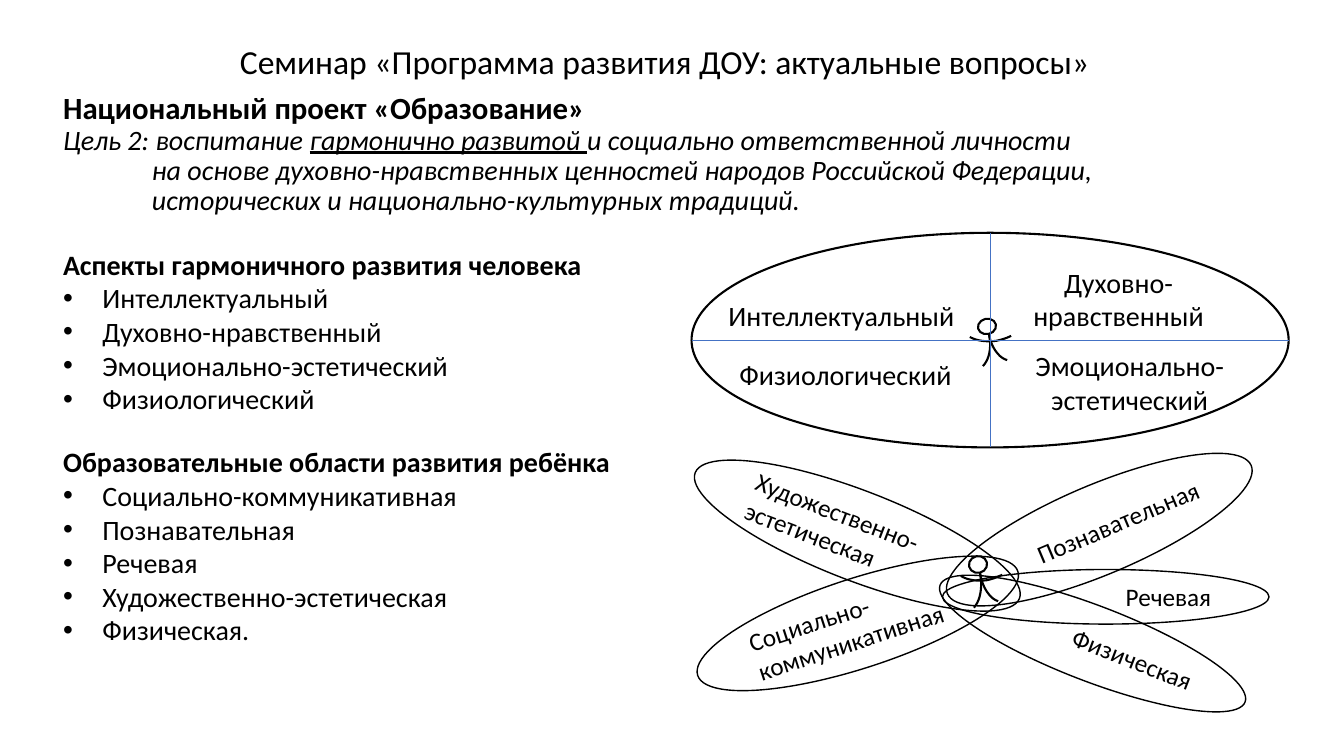
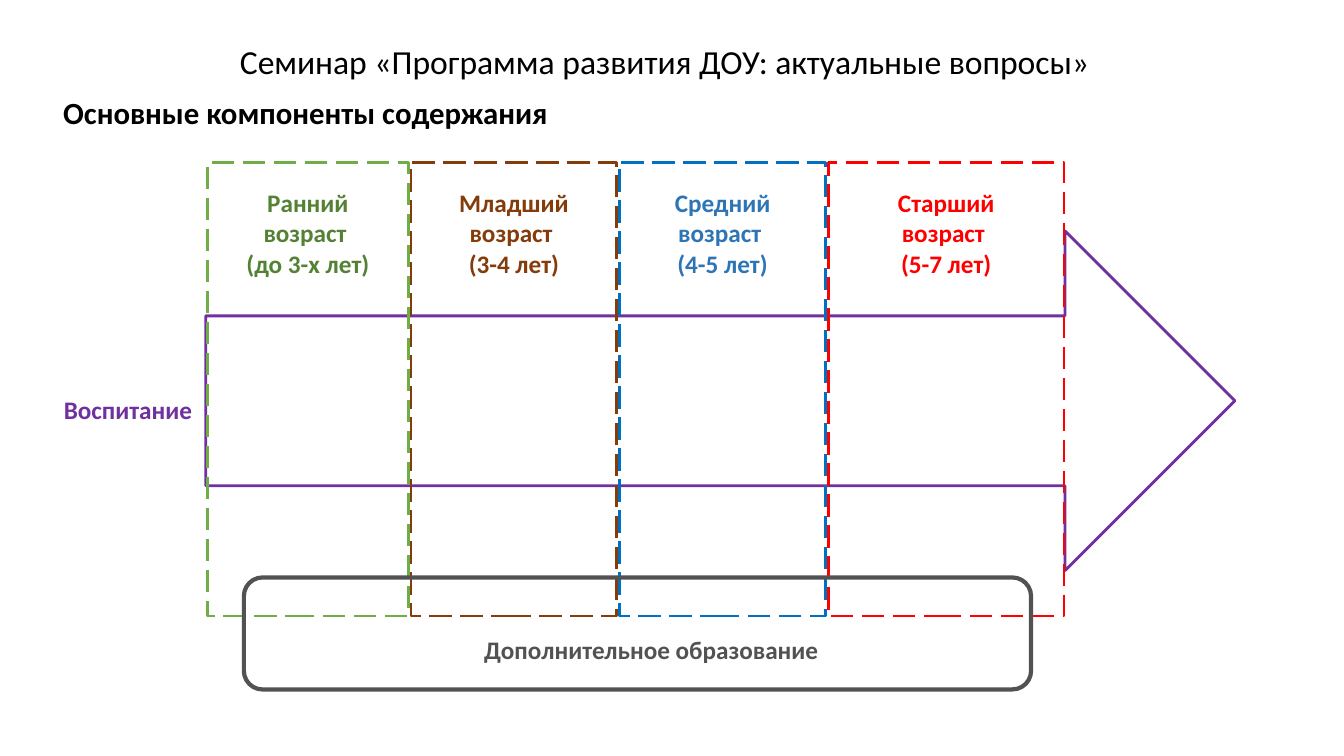
import dataclasses
import functools

import lxml.etree
import pptx
import pptx.dml.color
import pptx.enum.dml
import pptx.enum.shapes
import pptx.enum.text
import pptx.oxml.ns
import pptx.util

Pt = pptx.util.Pt
ALIGN = pptx.enum.text.PP_ALIGN
SHAPE = pptx.enum.shapes.MSO_SHAPE
qn = pptx.oxml.ns.qn


@dataclasses.dataclass(frozen=True)
class Theme:
    font: str = "Calibri"
    ink: str = "000000"
    axis: str = "4472C4"
    purple: str = "7030A0"
    gray: str = "525252"
    title: int = 24
    heading: int = 22
    body: int = 20
    label: int = 18
    tight: float = 0.9


T = Theme()
TITLE = "Семинар «Программа развития ДОУ: актуальные вопросы» "

GOAL = [  # lines, each a list of (text, underlined)
    [("Цель 2: воспитание ", False), ("гармонично развитой ", True),
     ("и социально ответственной личности", False)],
    [("на основе духовно-нравственных ценностей народов Российской Федерации,", False)],
    [("исторических и национально-культурных традиций.", False)],
]
LISTS = [  # heading, space before, items
    ("Аспекты гармоничного развития человека", 22,
     ["Интеллектуальный", "Духовно-нравственный",
      "Эмоционально-эстетический", "Физиологический"]),
    ("Образовательные области развития ребёнка", 21,
     ["Социально-коммуникативная", "Познавательная", "Речевая",
      "Художественно-эстетическая", "Физическая."]),
]
ASPECTS = [  # text, left, top, width, height
    ("Интеллектуальный", 511, 209.5, 180, 29),
    ("Духовно-нравственный", 721.5, 185.8, 155, 51),
    ("Физиологический", 514, 252, 180, 29),
    ("Эмоционально-эстетический", 726.5, 245.5, 161, 51),
]
PETALS = [  # text, left, top, width, height, rotation, alignment
    ("Социально-коммуникативная", 492.5, 413.3, 240.5, 64, -18, ALIGN.LEFT),
    ("Познавательная", 667.5, 346.3, 235.5, 64, -22.9, ALIGN.RIGHT),
    ("Художественно-эстетическая", 488.2, 350.6, 248.4, 64, 21.2, ALIGN.LEFT),
    ("Речевая", 673.2, 406.8, 233.3, 39, 0, ALIGN.RIGHT),
    ("Физическая", 663.8, 432.7, 233.3, 54, 21, ALIGN.RIGHT),
]
AGES = [  # text, column width, border colour, text colour
    ("Ранний возраст \v(до 3-х лет)", 143.3, "70AD47", "548235"),
    ("Младший возраст \v(3-4 лет)", 147, "843C0B", "843C0B"),
    ("Средний возраст \v(4-5 лет)", 147, "0070C0", "2E75B6"),
    ("Старший возраст \v(5-7 лет)", 168.5, "FF0000", "FF0000"),
]

# Limbs as Bezier points measured from the hip
LIMBS = [
    [(15.8, 1.4), (13, 2.9), (8.6, 4.3), (5, 5),
     (-2.2, 5.8), (-8.6, 5), (-13.7, 2.2)],
    [(13, 18.7), (7.2, 17.3), (1.4, 9.4), (0, 0)],
    [(-4.3, 23), (0, 18.7), (2.2, 10), (0, 0)],
]


def rgb(color):
    return pptx.dml.color.RGBColor.from_string(color)


# Text
def format_run(r, size, color=T.ink, bold=False, italic=False, underline=False):
    f = r.font
    f.name, f.size, f.bold, f.italic, f.underline = T.font, Pt(size), bold, italic, underline
    f.color.rgb = rgb(color)


def set_text(p, text, size, align=ALIGN.LEFT, **style):
    p.text = text
    p.alignment = align
    for r in p.runs:
        format_run(r, size, **style)


def add_box(slide, left, top, width, height):
    sp = slide.shapes.add_textbox(Pt(left), Pt(top), Pt(width), Pt(height))
    sp.text_frame.word_wrap = True
    return sp.text_frame


def add_label(slide, text, left, top, width, height, size=T.label,
              align=ALIGN.CENTER, **style):
    p = add_box(slide, left, top, width, height).paragraphs[0]
    set_text(p, text, size, align, **style)
    return p


def hang(p, indent, bullet=None):
    pPr = p._p.get_or_add_pPr()
    pPr.set("marL", str(Pt(indent)))
    pPr.set("indent", str(Pt(-indent)))
    if bullet:
        lxml.etree.SubElement(pPr, qn("a:buFont")).set("typeface", "Arial")
        lxml.etree.SubElement(pPr, qn("a:buChar")).set("char", bullet)


# Shapes
def outline(sp, color, width, dash=None):
    sp.shadow.inherit = False
    sp.fill.background()
    sp.line.color.rgb = rgb(color)
    sp.line.width = Pt(width)
    if dash:
        sp.line.dash_style = dash
    return sp


def add_outline(slide, kind, left, top, width, height, color=T.ink, line=1.5, dash=None):
    sp = slide.shapes.add_shape(kind, Pt(left), Pt(top), Pt(width), Pt(height))
    return outline(sp, color, line, dash)


def add_line(slide, x1, y1, x2, y2):
    ln = slide.shapes.add_connector(
        pptx.enum.shapes.MSO_CONNECTOR.STRAIGHT, Pt(x1), Pt(y1), Pt(x2), Pt(y2))
    ln.line.color.rgb = rgb(T.axis)
    ln.line.width = Pt(0.5)
    lxml.etree.SubElement(ln._element.spPr, qn("a:effectLst"))


def bezier(points, steps=10):
    """Sample a chain of cubic curves that share their end points."""
    result = [points[0]]
    for k in range(0, len(points) - 1, 3):
        curve = points[k:k + 4]
        for i in range(1, steps + 1):
            t = i / steps
            weights = ((1 - t) ** 3, 3 * t * (1 - t) ** 2, 3 * t * t * (1 - t), t ** 3)
            result.append(tuple(sum(w * c[axis] for w, c in zip(weights, curve))
                                for axis in (0, 1)))
    return result


def add_person(slide, x, y, stretch=1):
    for limb in LIMBS:
        pts = [(Pt(x + dx), Pt(y + dy * stretch)) for dx, dy in bezier(limb)]
        builder = slide.shapes.build_freeform(*pts[0])
        builder.add_line_segments(pts[1:], close=False)
        outline(builder.convert_to_shape(), T.ink, 1.5)
    head = add_outline(slide, SHAPE.OVAL, x - 7.9, y - 10.8 * stretch, 13, 11 * stretch)
    head.rotation = -12.3
    head.fill.solid()
    head.fill.fore_color.rgb = rgb("FFFFFF")


def add_petal(slide, text, left, top, width, height, rotation, align):
    sp = add_outline(slide, SHAPE.OVAL, left, top, width, height, line=1)
    sp.rotation = rotation
    tf = sp.text_frame
    tf.word_wrap = True
    tf.vertical_anchor = pptx.enum.text.MSO_ANCHOR.MIDDLE
    set_text(tf.paragraphs[0], text, T.label, align)


def add_slide(prs):
    slide = prs.slides.add_slide(prs.slide_layouts[6])
    add_label(slide, TITLE, 38, 28.8, 879, 34, T.title).line_spacing = T.tight
    return slide


# Slides
def goal_slide(prs):
    slide = add_slide(prs)

    # Goal and lists
    tf = add_box(slide, 38, 62.6, 896, 449)
    p = tf.paragraphs[0]
    set_text(p, "Национальный проект «Образование»", T.heading, bold=True)
    p.line_spacing = T.tight
    p = tf.add_paragraph()
    hang(p, 63.4)
    p.line_spacing = T.tight
    for i, line in enumerate(GOAL):
        if i:
            p.add_line_break()
        for text, underline in line:
            r = p.add_run()
            r.text = text
            format_run(r, T.body, italic=True, underline=underline)
    for heading, gap, items in LISTS:
        p = tf.add_paragraph()
        set_text(p, heading, T.body, bold=True)
        p.space_before = Pt(gap)
        for item in items:
            p = tf.add_paragraph()
            hang(p, 28, "•")
            set_text(p, item, T.body)

    # Four aspects around a person
    left, top, width, height = 494, 166.3, 426.5, 153.3
    mid_x, mid_y = left + width / 2, top + height / 2
    add_person(slide, 706.4, 238.5)
    add_outline(slide, SHAPE.OVAL, left, top, width, height)
    add_line(slide, mid_x, top, mid_x, top + height)
    add_line(slide, left, mid_y, left + width, mid_y)
    for aspect in ASPECTS:
        add_label(slide, *aspect, size=T.body)

    # Five areas as petals
    add_person(slide, 700, 409, 1.09)
    for petal in PETALS:
        add_petal(slide, *petal)


def components_slide(prs):
    slide = add_slide(prs)
    label = functools.partial(add_label, slide, bold=True)
    label("Основные компоненты содержания", 38, 63.5, 902, 34, T.heading, ALIGN.LEFT)

    # Upbringing arrow
    add_outline(slide, SHAPE.RIGHT_ARROW, 147, 165, 735, 242.6, T.purple, 2)
    label("Воспитание", 35.3, 278, 112.3, 29, color=T.purple)

    # Age columns
    left, top, gap, inset = 148.3, 116, 2, 13
    for text, width, border, color in AGES:
        add_outline(slide, SHAPE.RECTANGLE, left, top, width, 324, border, 2,
                    pptx.enum.dml.MSO_LINE.LONG_DASH)
        label(text, left + inset, top + 14.3, width - 2 * inset, 73, color=color)
        left += width + gap

    # Extra education
    add_outline(slide, SHAPE.ROUNDED_RECTANGLE, 174.2, 412.5, 562.3, 80, T.gray, 3)
    label("Дополнительное образование", 327, 449.3, 276.5, 29, color=T.gray)


def main():
    prs = pptx.Presentation()
    prs.slide_width, prs.slide_height = Pt(960), Pt(540)
    goal_slide(prs)
    components_slide(prs)
    prs.save("out.pptx")


if __name__ == "__main__":
    main()
